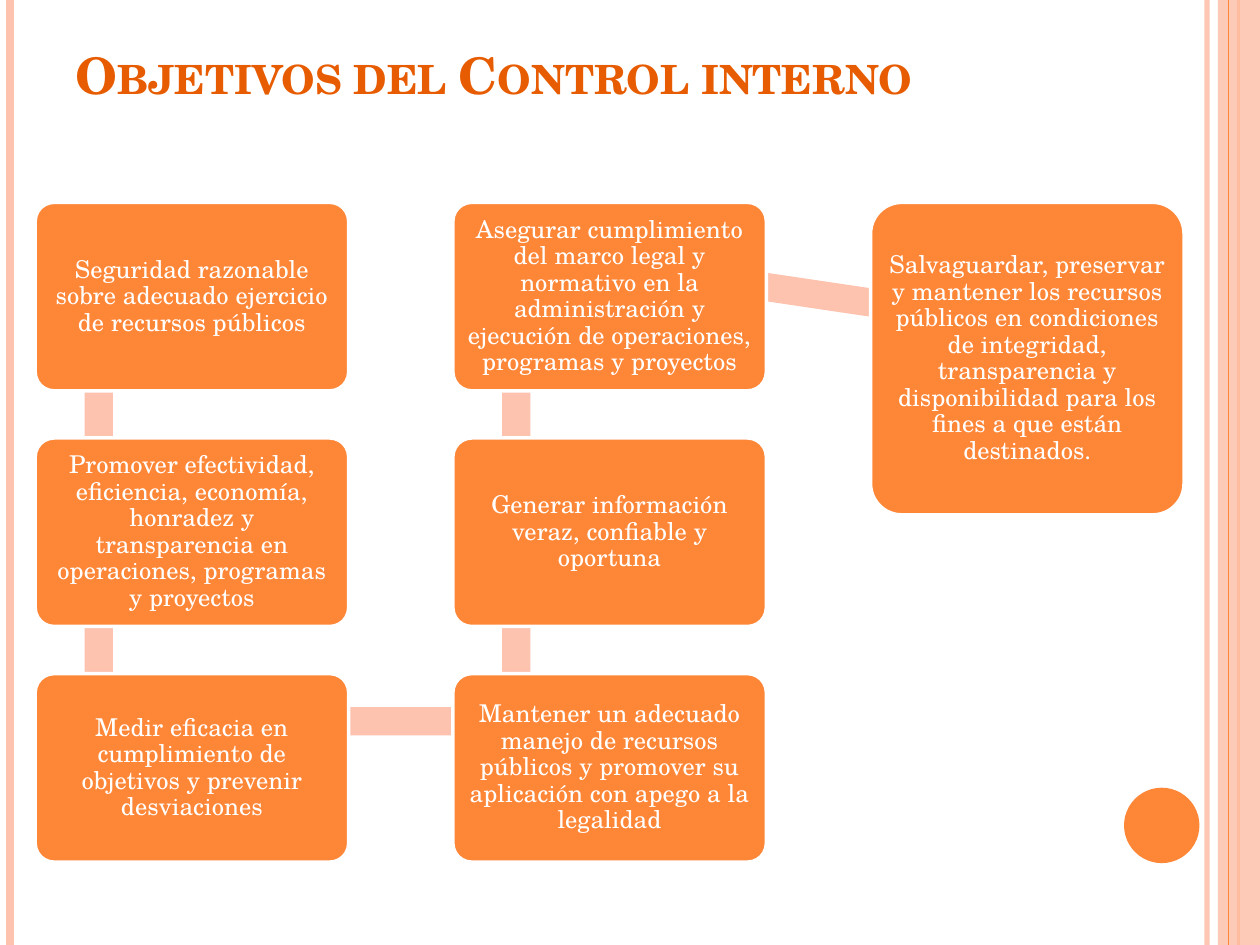
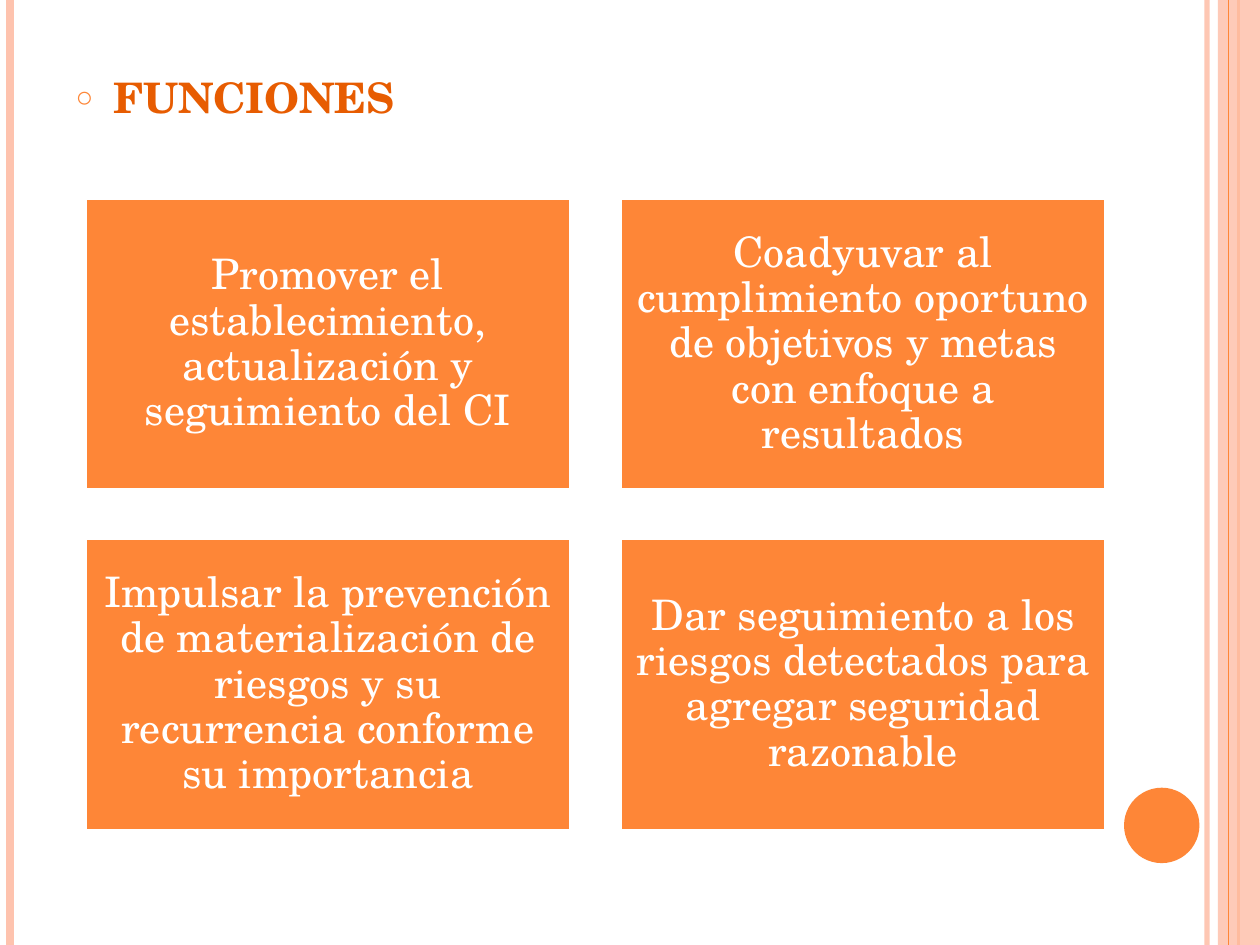
"""Two slides on the objectives and functions of internal control."""
from dataclasses import dataclass
from itertools import pairwise
from math import atan2, degrees, hypot
from typing import Any

from pptx import Presentation
from pptx.dml.color import RGBColor
from pptx.enum.shapes import MSO_CONNECTOR as CONN, MSO_SHAPE as SHAPE
from pptx.enum.text import MSO_ANCHOR as ANCHOR, MSO_AUTO_SIZE as FIT, PP_ALIGN as ALIGN
from pptx.oxml import parse_xml
from pptx.oxml.ns import nsdecls
from pptx.oxml.xmlchemy import OxmlElement
from pptx.util import Cm, Pt

ORANGE = RGBColor(0xFE, 0x86, 0x37)
PEACH = RGBColor(0xFE, 0xC3, 0xAE)
RUST = RGBColor(0xE7, 0x5C, 0x01)
WHITE = RGBColor(0xFF, 0xFF, 0xFF)
FONT = "TeX Gyre Schola"
SLIDE_W, SLIDE_H = 25.4, 19.05
BAR_THICK = 0.57
PORT_X, PORT_RISE = 1.28, 0.94

OBJECTIVES = [
    (0, 0, "Seguridad razonable sobre adecuado ejercicio de recursos públicos"),
    (0, 1, "Promover efectividad, eficiencia, economía, honradez y transparencia "
           "en operaciones, programas y proyectos"),
    (0, 2, "Medir eficacia en cumplimiento de objetivos y prevenir desviaciones"),
    (1, 2, "Mantener un adecuado manejo de recursos públicos y promover su "
           "aplicación con apego a la legalidad"),
    (1, 1, "Generar información veraz, confiable y oportuna"),
    (1, 0, "Asegurar cumplimiento del marco legal y normativo en la administración "
           "y ejecución de operaciones, programas y proyectos"),
    (2, 0, "Salvaguardar, preservar y mantener los recursos públicos en condiciones "
           "de integridad, transparencia y disponibilidad para los fines a que están "
           "destinados."),
]
FUNCTIONS = [
    "Promover el establecimiento, actualización y seguimiento del CI",
    "Coadyuvar al cumplimiento oportuno de objetivos y metas con enfoque a resultados",
    "Impulsar la prevención de materialización de riesgos y su recurrencia conforme "
    "su importancia",
    "Dar seguimiento a los riesgos detectados para agregar seguridad razonable",
]


@dataclass(frozen=True)
class Stripe:
    """A full-height line of the slide frame."""
    x: float
    width: float
    color: RGBColor
    alpha: int = 100


@dataclass(frozen=True)
class Box:
    """A filled box with centred text, measured in centimetres."""
    left: float
    top: float
    width: float
    height: float
    text: str

    @property
    def port(self) -> tuple[float, float]:
        """Return the point where linking bars meet the box."""
        return self.left + PORT_X, self.top + self.height / 2 - PORT_RISE


def apply(obj: Any, fmt: dict[str, Any]) -> None:
    """Set every format value on an object."""
    for name, value in fmt.items():
        setattr(obj, name, value)


def set_alpha(sp: Any, percent: int) -> None:
    """Make the first colour of a shape partly transparent."""
    alpha = OxmlElement("a:alpha")
    alpha.set("val", str(percent * 1000))
    sp.element.xpath(".//p:spPr//a:srgbClr")[0].append(alpha)


def add_stripe(slide: Any, stripe: Stripe) -> Any:
    """Draw one vertical line from top to bottom."""
    x = Cm(stripe.x)
    sp = slide.shapes.add_connector(CONN.STRAIGHT, x, 0, x, Cm(SLIDE_H))
    sp.line.color.rgb = stripe.color
    sp.line.width = Pt(stripe.width)
    if stripe.alpha < 100:
        set_alpha(sp, stripe.alpha)
    sp.element.spPr.append(OxmlElement("a:effectLst"))
    return sp


def add_fill(slide: Any, kind: Any, left: float, top: float, width: float,
             height: float, color: RGBColor) -> Any:
    """Draw a plain filled shape without outline."""
    sp = slide.shapes.add_shape(kind, Cm(left), Cm(top), Cm(width), Cm(height))
    sp.shadow.inherit = False
    sp.fill.solid()
    sp.fill.fore_color.rgb = color
    sp.line.fill.background()
    return sp


def build_frame(prs: Any, slide: Any) -> None:
    """Draw the shared frame and move it to the slide master."""
    parts = [add_stripe(slide, s) for s in (
        Stripe(24.33, 3, PEACH, 93), Stripe(0.2, 4.5, PEACH), Stripe(24.97, 1.5, ORANGE))]
    band = add_fill(slide, SHAPE.RECTANGLE, 24.55, 0, SLIDE_W - 24.55, SLIDE_H, PEACH)
    set_alpha(band, 87)
    parts += [band, add_stripe(slide, Stripe(24.77, 0.75, ORANGE)),
              add_fill(slide, SHAPE.OVAL, 22.66, 15.88, 1.52, 1.52, ORANGE)]
    for number, sp in enumerate(parts, 101):
        sp.element.xpath(".//p:cNvPr")[0].set("id", str(number))
        prs.slide_master.shapes.element.append(sp.element)


def write(sp: Any, text: str, size: float, color: RGBColor, bold: bool,
          frame: dict[str, Any], para: dict[str, Any]) -> None:
    """Put one formatted paragraph in a shape."""
    tf = sp.text_frame
    apply(tf, {"word_wrap": True, "auto_size": FIT.NONE, **frame})
    p = tf.paragraphs[0]
    apply(p, para)
    r = p.add_run()
    r.text = text
    apply(r.font, {"name": FONT, "size": Pt(size), "bold": bold})
    r.font.color.rgb = color


def add_box(slide: Any, box: Box, kind: Any, size: float, margin: float) -> Any:
    """Draw an orange box with a white edge and white text."""
    sp = add_fill(slide, kind, box.left, box.top, box.width, box.height, ORANGE)
    sp.line.color.rgb = WHITE
    sp.line.width = Pt(2)
    sides = ("left", "top", "right", "bottom")
    frame = {f"margin_{side}": Cm(margin) for side in sides}
    write(sp, box.text, size, WHITE, False,
          {"vertical_anchor": ANCHOR.MIDDLE, **frame},
          {"alignment": ALIGN.CENTER, "line_spacing": 0.9})
    return sp


def add_bar(slide: Any, start: Box, end: Box) -> None:
    """Link two boxes with a bar turned along the line between their ports."""
    (x1, y1), (x2, y2) = start.port, end.port
    length = hypot(x2 - x1, y2 - y1)
    sp = add_fill(slide, SHAPE.RECTANGLE, (x1 + x2 - length) / 2,
                  (y1 + y2 - BAR_THICK) / 2, length, BAR_THICK, PEACH)
    sp.rotation = degrees(atan2(y2 - y1, x2 - x1))


def place(sp: Any, left: float, top: float, width: float, height: float) -> None:
    """Move and size a placeholder."""
    apply(sp, {"left": Cm(left), "top": Cm(top), "width": Cm(width), "height": Cm(height)})


def build_objectives(slide: Any) -> None:
    """Fill the slide of linked objectives."""
    title = slide.shapes.title
    place(title, 1.27, 0.76, 20.75, 2.57)
    write(title, "Objetivos del Control interno", 28.8, RUST, True,
          {"vertical_anchor": ANCHOR.TOP}, {"alignment": ALIGN.LEFT})
    title.element.xpath(".//a:rPr")[0].set("cap", "small")
    boxes = [Box(0.71 + 8.42 * col, 4.08 + 4.75 * row, 6.32, 6.3 if col == 2 else 3.8, text)
             for col, row, text in OBJECTIVES]
    for start, end in pairwise(boxes):
        add_bar(slide, start, end)
    for box in boxes:
        sp = add_box(slide, box, SHAPE.ROUNDED_RECTANGLE, 14, 0.15)
        sp.adjustments[0] = 0.1


def build_functions(slide: Any) -> None:
    """Fill the slide of four functions."""
    title = slide.shapes.title
    title.element.getparent().remove(title.element)
    body = slide.placeholders[1]
    place(body, 1.27, 1.32, 20.75, 16.66)
    write(body, "FUNCIONES", 24, RUST, True, {"vertical_anchor": ANCHOR.TOP},
          {"alignment": ALIGN.LEFT, "space_before": Pt(6)})
    pPr = body.element.xpath(".//a:pPr")[0]
    apply(pPr, {"marL": Cm(0.76), "indent": -Cm(0.76)})
    for name, value in {"marL": Cm(0.76), "indent": -Cm(0.76)}.items():
        pPr.set(name, str(int(value)))
    ns = nsdecls("a")
    for xml in (f'<a:buClr {ns}><a:srgbClr val="{ORANGE}"/></a:buClr>',
                f'<a:buSzPct {ns} val="70000"/>',
                f'<a:buChar {ns} char="○"/>'):
        pPr.append(parse_xml(xml))
    for i, text in enumerate(FUNCTIONS):
        row, col = divmod(i, 2)
        box = Box(1.71 + 10.79 * col, 4 + 6.86 * row, 9.8, 5.88, text)
        add_box(slide, box, SHAPE.RECTANGLE, 24, 0.25)


def main() -> None:
    """Build and save the presentation."""
    prs = Presentation()
    apply(prs, {"slide_width": Cm(SLIDE_W), "slide_height": Cm(SLIDE_H)})
    title_only, content = prs.slide_layouts[5], prs.slide_layouts[1]
    slide = prs.slides.add_slide(title_only)
    build_frame(prs, slide)
    build_objectives(slide)
    build_functions(prs.slides.add_slide(content))
    prs.save("out.pptx")


if __name__ == "__main__":
    main()
